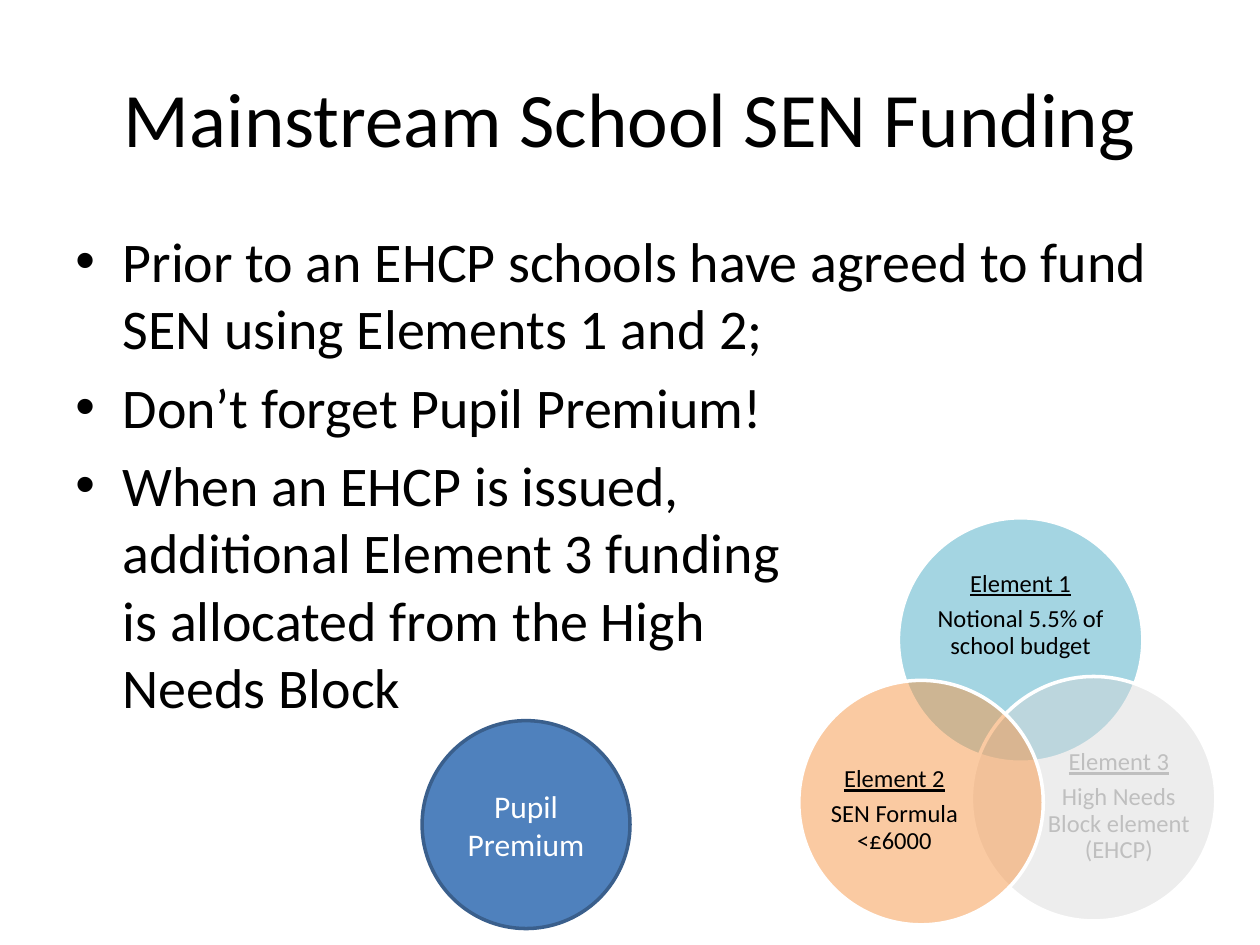
from pptx import Presentation
from pptx.dml.color import RGBColor as RGB
from pptx.enum.shapes import MSO_SHAPE as Shape
from pptx.enum.text import MSO_ANCHOR as Anchor, PP_ALIGN as Align
from pptx.oxml.ns import qn
from pptx.util import Pt
from lxml.etree import SubElement as Sub

BLACK = RGB(0x00, 0x00, 0x00)
WHITE = RGB(0xFF, 0xFF, 0xFF)
BLUE = RGB(0x4F, 0x81, 0xBD)
NAVY = RGB(0x3A, 0x5F, 0x8C)
TEAL = RGB(0x4B, 0xAC, 0xC6)
ORANGE = RGB(0xF7, 0x96, 0x46)
PALE = RGB(0xD9, 0xD9, 0xD9)
GREY = RGB(0xBF, 0xBF, 0xBF)


def add_run(para, text, size, color, under=False):
    run = para.add_run()
    run.text = text
    font = run.font
    font.name = "Calibri"
    font.size = Pt(size)
    font.color.rgb = color
    font.underline = under


def add_disc(left, top, size, fill, line):
    disc = slide.shapes.add_shape(Shape.OVAL, Pt(left), Pt(top), Pt(size), Pt(size))
    disc.shadow.inherit = False
    disc.fill.solid()
    disc.fill.fore_color.rgb = fill
    disc.line.color.rgb = line
    disc.line.width = Pt(2)
    return disc


deck = Presentation()
deck.slide_width, deck.slide_height = Pt(720), Pt(540)
slide = deck.slides.add_slide(deck.slide_layouts[6])

# Title
box = slide.shapes.add_textbox(Pt(36), Pt(21.6), Pt(648), Pt(90))
frame = box.text_frame
frame.word_wrap = True
frame.vertical_anchor = Anchor.MIDDLE
para = frame.paragraphs[0]
para.alignment = Align.CENTER
add_run(para, "Mainstream School SEN Funding", 44, BLACK)

# Bullets, each a list of lines
points = [
    ["Prior to an EHCP schools have agreed to fund SEN using Elements 1 and 2;"],
    ["Don’t forget Pupil Premium!"],
    ["When an EHCP is issued,", "additional Element 3 funding",
     "is allocated from the High", "Needs Block"],
]
box = slide.shapes.add_textbox(Pt(36), Pt(126), Pt(648), Pt(356.4))
frame = box.text_frame
frame.word_wrap = True
for i, lines in enumerate(points):
    para = frame.add_paragraph() if i else frame.paragraphs[0]
    para.space_before = Pt(6.4)
    props = para._p.get_or_add_pPr()
    props.set("marL", str(Pt(27)))
    props.set("indent", str(-Pt(27)))
    Sub(props, qn("a:buFont")).set("typeface", "Arial")
    Sub(props, qn("a:buChar")).set("char", "•")
    for j, line in enumerate(lines):
        if j:
            para.add_line_break()
        add_run(para, line, 32, BLACK)

# Pupil Premium disc
disc = add_disc(241.2, 411.8, 118.8, BLUE, NAVY)
frame = disc.text_frame
frame.word_wrap = True
frame.vertical_anchor = Anchor.MIDDLE
para = frame.paragraphs[0]
para.alignment = Align.CENTER
add_run(para, "Pupil Premium", 18, WHITE)

# Venn diagram: disc place, fill, opacity in %, label box, text colour, words
venn = [
    (513.4, 295.9, TEAL, 50, (532.1, 320.4, 102.2, 62.6), BLACK,
     "Element 1", "Notional 5.5% of school budget"),
    (555.1, 386.6, PALE, 47, (597.6, 422.6, 83.5, 77), GREY,
     "Element 3", "High Needs Block element (EHCP)"),
    (456.5, 388.8, ORANGE, 50, (469.4, 424.8, 83.5, 77), BLACK,
     "Element 2", "SEN Formula <£6000"),
]
for left, top, fill, alpha, place, color, head, body in venn:
    disc = add_disc(left, top, 139.7, fill, WHITE)
    tone = disc._element.spPr.find(qn("a:solidFill")).find(qn("a:srgbClr"))
    Sub(tone, qn("a:alpha")).set("val", str(alpha * 1000))

    box = slide.shapes.add_textbox(*[Pt(n) for n in place])
    frame = box.text_frame
    frame.word_wrap = True
    frame.vertical_anchor = Anchor.MIDDLE
    frame.margin_left = frame.margin_right = 0
    frame.margin_top = frame.margin_bottom = 0
    for para, text in (frame.paragraphs[0], head), (frame.add_paragraph(), body):
        para.alignment = Align.CENTER
        para.line_spacing = 0.9
        para.space_after = Pt(4.9)
        add_run(para, text, 14, color, text == head)

deck.save("out.pptx")
